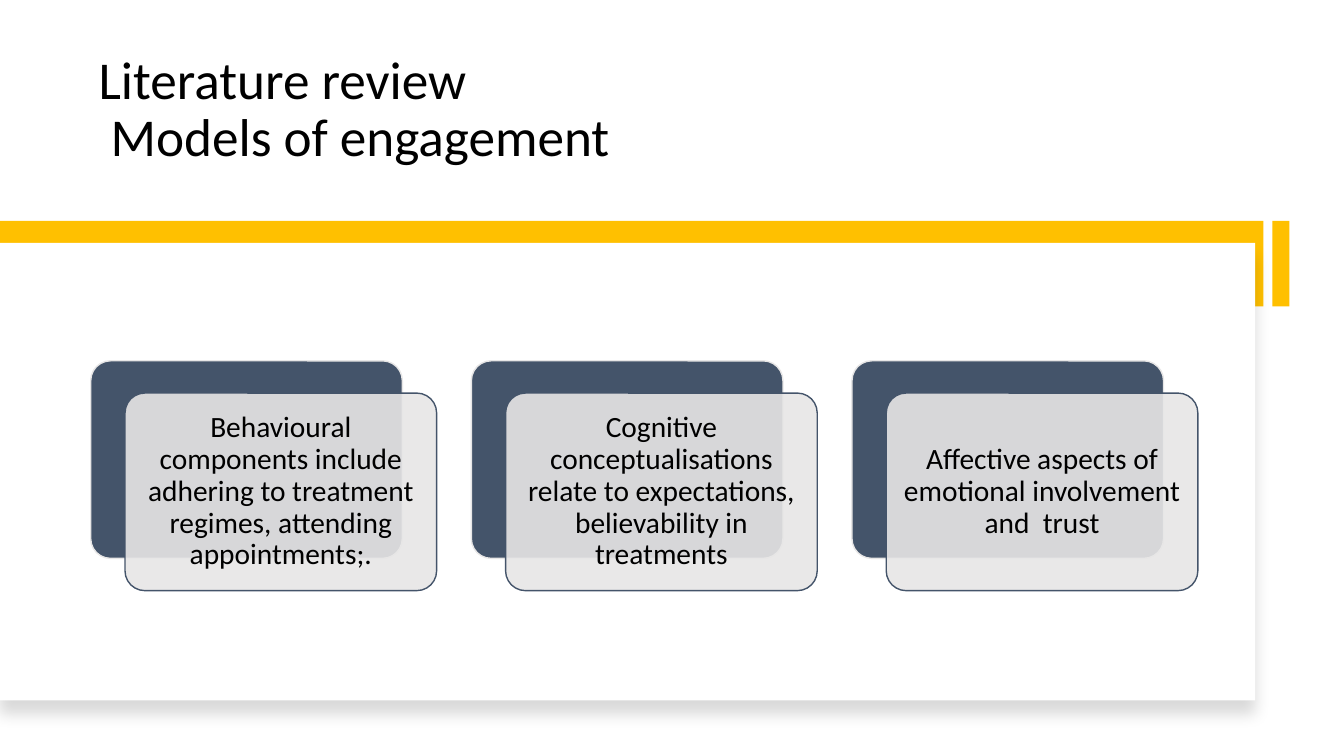
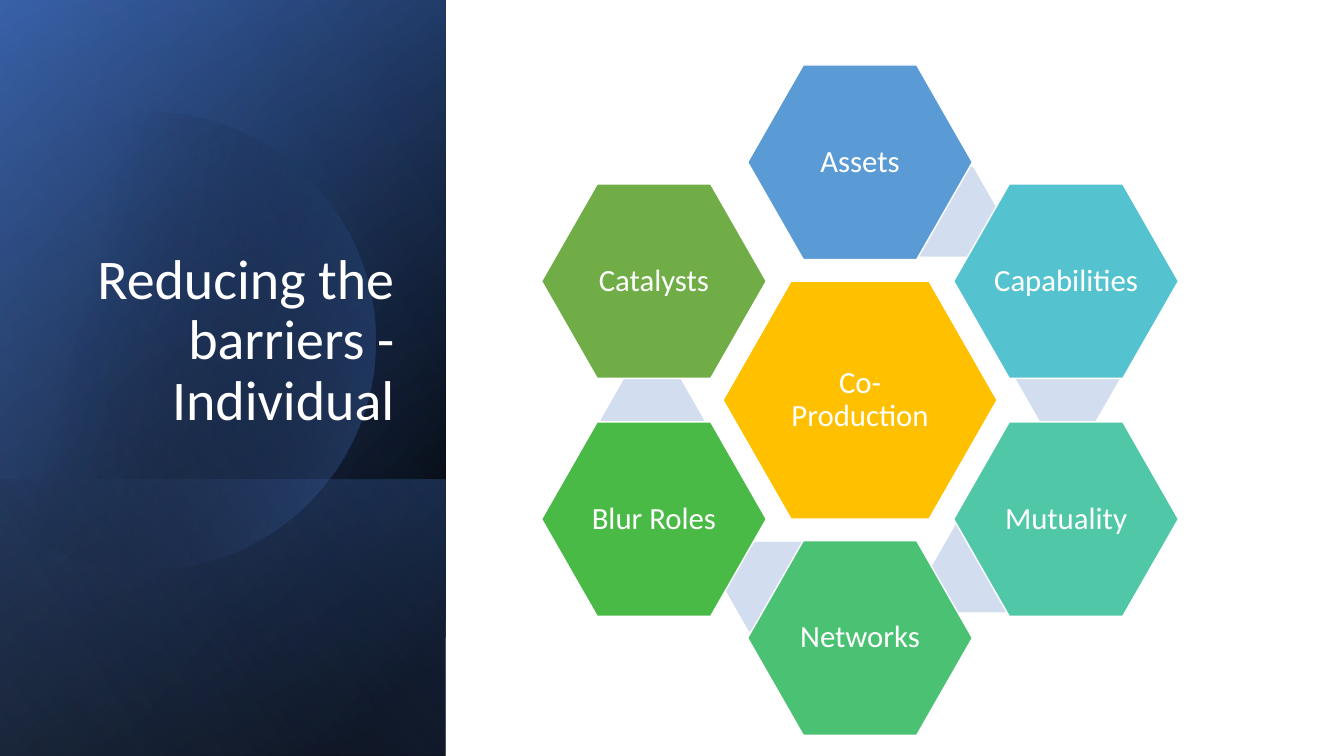
from math import cos, radians, sin

from lxml.etree import SubElement as sub
from pptx import Presentation
from pptx.dml.color import RGBColor
from pptx.enum.shapes import MSO_SHAPE as Kind
from pptx.enum.text import MSO_ANCHOR as Anchor, PP_ALIGN as Align
from pptx.oxml.ns import qn
from pptx.util import Inches, Pt

FONT = "Calibri"
BLACK, WHITE, GOLD = "000000", "FFFFFF", "FFC000"
SLATE, PALE, BLUE, LINK = "44546A", "E7E6E6", "4472C4", "D2DEEF"

CARDS = [
    "Behavioural components include adhering to treatment regimes, attending appointments;.",
    "Cognitive conceptualisations relate to expectations, believability in treatments",
    "Affective aspects of emotional involvement and  trust",
]
RING = [
    ("Assets", "5B9BD5", (9.39, 2.1)),
    ("Capabilities", "55C3CF", (10.59, 3.76)),
    ("Mutuality", "50C8A7", (9.75, 5.63)),
    ("Networks", "4BC174", (7.69, 5.82)),
    ("Blur Roles", "4ABA46", (6.47, 4.17)),
    ("Catalysts", "70AD47", None),
]


def color(hex):
    """Turn a hex string into a colour."""
    return RGBColor.from_string(hex)


def write(frame, text, size, hex, align, inset=(0.1, 0.05), anchor=Anchor.MIDDLE):
    """Fill a text frame with one styled paragraph."""
    frame.word_wrap = True
    frame.vertical_anchor = anchor
    frame.margin_left = frame.margin_right = Inches(inset[0])
    frame.margin_top = frame.margin_bottom = Inches(inset[1])
    para = frame.paragraphs[0]
    para.text = text
    para.alignment = align
    para.line_spacing = 0.9
    for run in para.runs:
        run.font.name = FONT
        run.font.size = Pt(size)
        run.font.color.rgb = color(hex)


def title(slide, text, box, size, hex=BLACK, align=Align.LEFT):
    """Add a slide title that sits on the bottom of its box."""
    frame = slide.shapes.add_textbox(*map(Inches, box)).text_frame
    write(frame, text, size, hex, align, anchor=Anchor.BOTTOM)


def paint(shape, fill, line=None):
    """Set a flat fill and an optional outline, without shadow."""
    shape.shadow.inherit = False
    shape.fill.solid()
    shape.fill.fore_color.rgb = color(fill)
    if line:
        shape.line.color.rgb = color(line)
        shape.line.width = Pt(1)
    else:
        shape.line.fill.background()


def block(slide, kind, box, fill, line=None, adj=None):
    """Add a flat preset shape."""
    shape = slide.shapes.add_shape(kind, *map(Inches, box))
    if adj:
        shape.adjustments[0] = adj
    paint(shape, fill, line)
    return shape


def fade(tint, alpha):
    """Give a colour element its opacity in percent."""
    sub(tint, qn("a:alpha"), val=str(alpha * 1000))


def blend(shape, stops, angle):
    """Replace the fill by a linear gradient of (place, colour, opacity) stops."""
    props = shape.fill._xPr
    old = props.find(qn("a:solidFill"))
    grad = props.makeelement(qn("a:gradFill"), {"rotWithShape": "1"})
    steps = sub(grad, qn("a:gsLst"))
    for place, hex, alpha in stops:
        step = sub(steps, qn("a:gs"), pos=str(place * 1000))
        fade(sub(step, qn("a:srgbClr"), val=hex), alpha)
    sub(grad, qn("a:lin"), ang=str(angle * 60000), scaled="0")
    props.replace(old, grad)


def drop(shape):
    """Cast a soft shadow straight down."""
    effect = shape._element.spPr.find(qn("a:effectLst"))
    cast = sub(effect, qn("a:outerShdw"), blurRad=str(Pt(11)), dist=str(Pt(10)),
               dir="5400000", algn="t", rotWithShape="0")
    fade(sub(cast, qn("a:srgbClr"), val=BLACK), 15)


def veil(slide, top, height, stops, angle):
    """Add a turned, mirrored gradient layer over the side panel."""
    width = 4.42
    box = (width - height) / 2, top + (height - width) / 2, height, width
    shape = block(slide, Kind.RECTANGLE, box, BLACK)
    shape.rotation = 90
    shape._element.spPr.xfrm.set("flipH", "1")
    blend(shape, stops, angle)


def disc(slide, x, y, radius):
    """Add a circle cut off by an upright chord on its left."""
    dots = [(Inches(x + radius * cos(radians(a))), Inches(y + radius * sin(radians(a))))
            for a in range(-135, 136, 3)]
    path = slide.shapes.build_freeform(*dots[0])
    path.add_line_segments(dots[1:], close=True)
    shape = path.convert_to_shape()
    paint(shape, BLACK)
    blend(shape, [(29, BLACK, 0), (100, BLUE, 43)], 14)


def card(slide, x, text):
    """Add a text card in front of a dark backing card."""
    size = 3.09, 1.96
    block(slide, Kind.ROUNDED_RECTANGLE, (x, 3.58, *size), SLATE, PALE, 0.1)
    front = block(slide, Kind.ROUNDED_RECTANGLE, (x + 0.34, 3.9, *size), PALE, SLATE, 0.1)
    fade(front.fill._xPr.find(qn("a:solidFill"))[0], 90)
    write(front.text_frame, text, 21, BLACK, Align.CENTER, (0.09, 0.09))


def cell(slide, x, y, width, height, fill, text=None):
    """Add a hexagon around a centre, outlined when it has text."""
    box = x - width / 2, y - height / 2, width, height
    shape = block(slide, Kind.HEXAGON, box, fill, WHITE if text else None, 0.286)
    if text:
        write(shape.text_frame, text, 22, WHITE, Align.CENTER, (0.03, 0.03))


def models(slide):
    """Build the slide on models of engagement."""
    title(slide, "Literature review\v Models of engagement", (0.88, 0.42, 10.1, 1.3), 38)
    for x, width in ((12.62, 0.17), (0, 12.53)):
        block(slide, Kind.RECTANGLE, (x, 2.19, width, 0.85), GOLD)
    drop(block(slide, Kind.RECTANGLE, (0, 2.41, 12.45, 4.54), WHITE))
    for i, text in enumerate(CARDS):
        card(slide, 0.9 + 3.775 * i, text)


def barriers(slide):
    """Build the slide on reducing the barriers."""
    veil(slide, 0, 7.5, [(8, BLACK, 100), (100, "2F5597", 100)], 50)
    veil(slide, 0, 7.5, [(0, BLACK, 0), (99, BLUE, 46)], 30)
    veil(slide, 4.76, 2.74, [(2, BLUE, 29), (100, BLACK, 30)], 130)
    disc(slide, 1.45, 3.38, 2.27)
    veil(slide, 0, 7.5, [(0, BLACK, 0), (99, "8FAADC", 11)], 120)
    title(slide, "Reducing the barriers - Individual", (0.51, 0.64, 3.5, 3.7),
          40, WHITE, Align.RIGHT)
    x, y, reach = 8.53, 3.97, 2.36
    cell(slide, x, y, 2.72, 2.36, GOLD, "Co-Production")
    for i, (text, fill, link) in enumerate(RING):
        if link:
            cell(slide, *link, 1.03, 0.89, LINK)
        turn = radians(60 * i)
        cell(slide, x + reach * sin(turn), y - reach * cos(turn), 2.23, 1.93, fill, text)


def main():
    """Build and save the deck."""
    deck = Presentation()
    deck.slide_width, deck.slide_height = Inches(13.33), Inches(7.5)
    for build in (models, barriers):
        build(deck.slides.add_slide(deck.slide_layouts[6]))
    deck.save("out.pptx")


if __name__ == "__main__":
    main()
